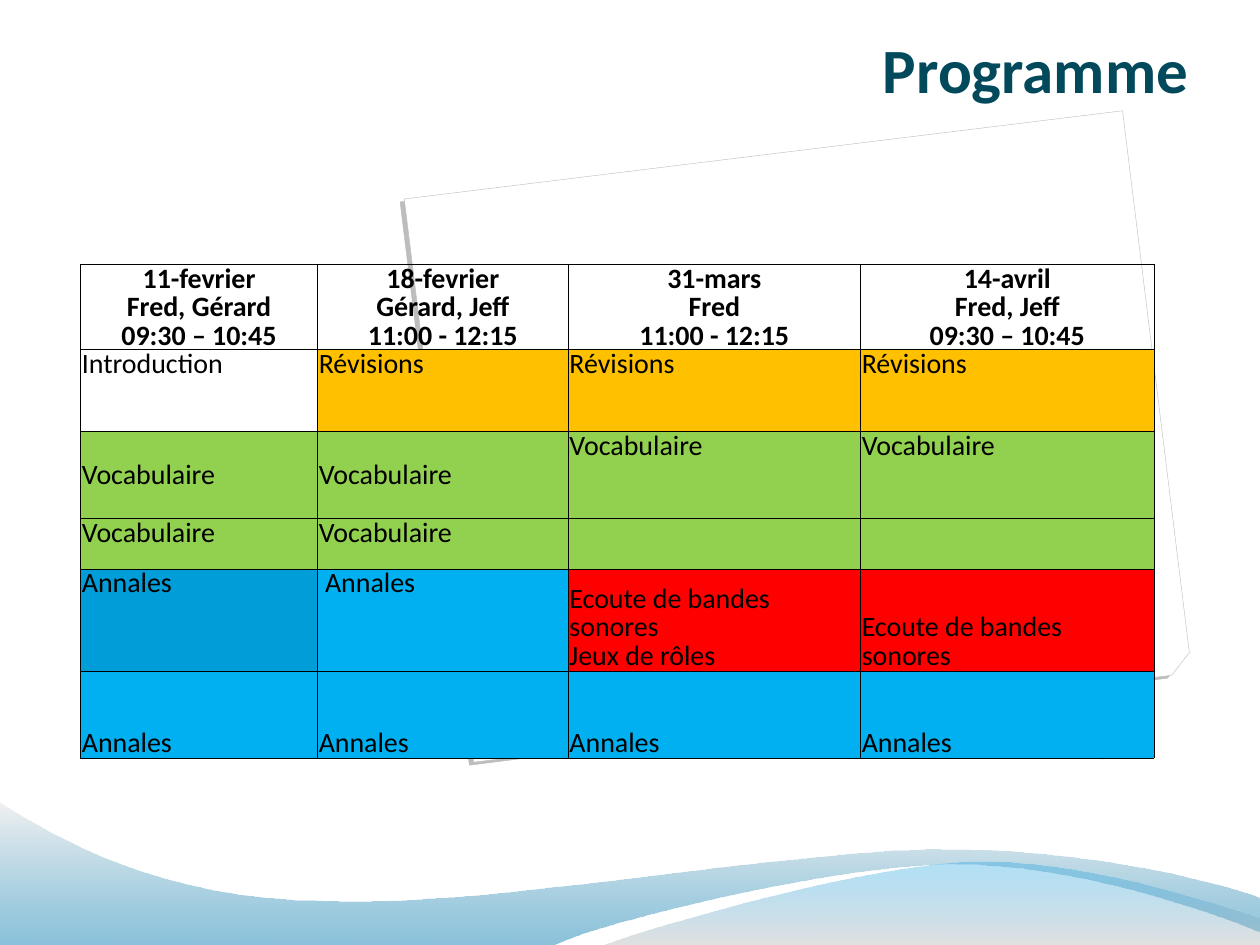
import math

from pptx import Presentation, util as u
from pptx.dml.color import RGBColor
from pptx.enum import text
from pptx.oxml import ns, parse_xml

BLACK = RGBColor(0, 0, 0)
WHITE = RGBColor(255, 255, 255)
SILVER = RGBColor(0xC0, 0xC0, 0xC0)
TEAL = RGBColor(0x03, 0x49, 0x5C)
DEEP_BLUE = RGBColor(0x00, 0x79, 0xAF)
SKY = RGBColor(0x00, 0x9B, 0xE5)
PALE = RGBColor(0xE7, 0xE7, 0xE7)
GREY = RGBColor(0xBC, 0xBC, 0xBC)
AMBER = RGBColor(0xFF, 0xC0, 0x00)
GREEN = RGBColor(0x92, 0xD0, 0x50)
OCEAN = RGBColor(0x00, 0x9D, 0xD9)
BLUE = RGBColor(0x00, 0xB0, 0xF0)
RED = RGBColor(0xFF, 0x00, 0x00)

TOP = text.MSO_ANCHOR.TOP
MIDDLE = text.MSO_ANCHOR.MIDDLE
BOTTOM = text.MSO_ANCHOR.BOTTOM

TILT = 7
SHEET = [(3.76, 6.05), (9.3, 5.36), (9.44, 5.18), (8.91, 0.88), (3.21, 1.58)]
SHEET_CENTER = (6.34, 3.46)
FOLD = [(8.76, 6.04), (8.74, 5.87), (8.91, 5.85)]
FOLD_CENTER = (8.84, 5.94)
LONG_WAVE = [
    (0, 7.5), (4.4, 7.5),
    (4.76, 7.32, 6.64, 6.86, 7.58, 6.86), (8.53, 6.86, 9.58, 7.23, 10, 7.4),
    (10.01, 7.13),
    (9.83, 7.05, 8.7, 6.73, 7.46, 6.74), (6.22, 6.74, 3.82, 7.21, 2.57, 7.15),
    (1.29, 7.14, 0.46, 6.66, -0.01, 6.36),
]
SHORT_WAVE = [
    (4.79, 7.5), (5.09, 7.38, 6.82, 6.87, 7.69, 6.84),
    (8.56, 6.8, 9.61, 7.17, 10, 7.28), (10, 7.5),
]

COLUMNS = [1.88, 1.99, 2.32, 2.33]
ROWS = [0.37, 0.65, 0.69, 0.37, 0.81, 0.69]
HEADERS = [
    "11-fevrier\vFred, Gérard\v09:30 – 10:45",
    "18-fevrier\vGérard, Jeff\v11:00 - 12:15",
    "31-mars\vFred\v11:00 - 12:15",
    "14-avril\vFred, Jeff\v09:30 – 10:45",
]
REVISION = ("Révisions", AMBER, TOP)
VOCABULARY = ("Vocabulaire", GREEN, TOP)
VOCABULARY_MIDDLE = ("Vocabulaire", GREEN, MIDDLE)
VOCABULARY_BLANK = ("", GREEN, TOP)
PROGRAMME = [
    [(header, None, BOTTOM) for header in HEADERS],
    [("Introduction", None, TOP)] + [REVISION] * 3,
    [VOCABULARY_MIDDLE] * 2 + [VOCABULARY] * 2,
    [VOCABULARY] * 2 + [VOCABULARY_BLANK] * 2,
    [
        ("Annales", OCEAN, TOP),
        (" Annales", BLUE, TOP),
        ("Ecoute de bandes sonores\nJeux de rôles", RED, BOTTOM),
        ("Ecoute de bandes sonores", RED, BOTTOM),
    ],
    [("Annales", BLUE, BOTTOM)] * 4,
]


def turn(point, center, degrees):
    angle = math.radians(degrees)
    x, y = point[0] - center[0], point[1] - center[1]
    return (
        center[0] + x * math.cos(angle) - y * math.sin(angle),
        center[1] + x * math.sin(angle) + y * math.cos(angle),
    )


class SlideBuilder:
    font_name = "Calibri"

    def __init__(self, page):
        self.page = page

    def outline(self, outline):
        points = [
            (u.Inches(x), u.Inches(y))
            for segment in outline
            for x, y in zip(segment[::2], segment[1::2])
        ]
        builder = self.page.shapes.build_freeform(*points[0], scale=1.0)
        builder.add_line_segments(points[1:], close=True)
        shape = builder.convert_to_shape()
        shape.shadow.inherit = False
        lines = iter(list(shape._element.iter(ns.qn("a:lnTo"))))
        for segment in outline[1:]:
            line = next(lines)
            if len(segment) == 6:
                curve = parse_xml(f'<a:cubicBezTo {ns.nsdecls("a")}/>')
                line.addprevious(curve)
                for part in (line, next(lines), next(lines)):
                    curve.append(part[0])
                    part.getparent().remove(part)
        return shape

    def paper(self, outline, center, line_color, line_width, alpha, distance, angle):
        shape = self.outline([turn(point, center, TILT) for point in outline])
        shape.rotation = 360 - TILT
        shape.fill.solid()
        shape.fill.fore_color.rgb = WHITE
        shape.line.color.rgb = line_color
        shape.line.width = u.Pt(line_width)
        effects = shape._element.spPr.find(ns.qn("a:effectLst"))
        effects.append(parse_xml(
            f'<a:outerShdw {ns.nsdecls("a")} blurRad="0" dist="{u.Pt(distance)}" '
            f'dir="{angle * 60000}" algn="ctr" rotWithShape="0"><a:srgbClr val="{BLACK}">'
            f'<a:alpha val="{alpha * 1000}"/></a:srgbClr></a:outerShdw>'
        ))

    def wave(self, outline, *stops):
        shape = self.outline(outline)
        shape.line.fill.background()
        shape.fill.gradient()
        shape.fill.gradient_angle = 90
        for stop, (color, alpha) in zip(shape.fill.gradient_stops, stops):
            stop.color.rgb = color
        colors = shape._element.spPr.iter(ns.qn("a:srgbClr"))
        for element, (color, alpha) in zip(list(colors), stops):
            element.append(parse_xml(
                f'<a:alpha {ns.nsdecls("a")} val="{alpha * 1000}"/>'
            ))

    def style(self, paragraph, size, color, bold, align):
        paragraph.alignment = align
        paragraph.font.name = self.font_name
        paragraph.font.size = u.Pt(size)
        paragraph.font.bold = bold
        paragraph.font.color.rgb = color

    def title(self, words, left, top, width, height):
        box = self.page.shapes.add_textbox(*map(u.Inches, (left, top, width, height)))
        frame = box.text_frame
        frame.word_wrap = True
        frame.vertical_anchor = BOTTOM
        frame.margin_left = frame.margin_right = frame.margin_bottom = 0
        frame.text = words
        self.style(frame.paragraphs[0], 36, TEAL, True, text.PP_ALIGN.RIGHT)

    def borders(self, cell):
        properties = cell._tc.get_or_add_tcPr()
        for side in "LRTB":
            properties.append(parse_xml(
                f'<a:ln{side} {ns.nsdecls("a")} w="{u.Pt(0.23)}"><a:solidFill>'
                f'<a:srgbClr val="{BLACK}"/></a:solidFill></a:ln{side}>'
            ))

    def cell(self, cell, words, color, anchor, header):
        self.borders(cell)
        if color is None:
            cell.fill.background()
        else:
            cell.fill.solid()
            cell.fill.fore_color.rgb = color
        if not words:
            return
        cell.margin_left = cell.margin_right = cell.margin_top = u.Inches(0.01)
        cell.margin_bottom = 0
        cell.vertical_anchor = anchor
        cell.text_frame.text = words
        align = text.PP_ALIGN.CENTER if header else text.PP_ALIGN.LEFT
        for paragraph in cell.text_frame.paragraphs:
            paragraph.line_spacing = 0.83
            self.style(paragraph, 16, BLACK, header, align)

    def table(self, rows, left, top):
        size = (left, top, sum(COLUMNS), sum(ROWS))
        table = self.page.shapes.add_table(
            len(ROWS), len(COLUMNS), *map(u.Inches, size)
        ).table
        table.first_row = table.horz_banding = False
        for column, width in zip(table.columns, COLUMNS):
            column.width = u.Inches(width)
        for index, (row, height) in enumerate(zip(table.rows, ROWS)):
            row.height = u.Inches(height)
            for cell, content in zip(row.cells, rows[index]):
                self.cell(cell, *content, header=index == 0)


def main():
    deck = Presentation()
    deck.slide_width, deck.slide_height = u.Inches(10), u.Inches(7.5)
    slide = SlideBuilder(deck.slides.add_slide(deck.slide_layouts[6]))
    slide.paper(SHEET, SHEET_CENTER, SILVER, 0.25, alpha=25, distance=3, angle=145)
    slide.paper(FOLD, FOLD_CENTER, WHITE, 1, alpha=47, distance=0.5, angle=272)
    slide.wave(LONG_WAVE, (DEEP_BLUE, 46), (PALE, 56))
    slide.wave(SHORT_WAVE, (GREY, 46), (SKY, 31))
    slide.title("Programme", 0.43, 0.13, 9, 0.71)
    slide.table(PROGRAMME, 0.64, 2.1)
    deck.save("out.pptx")


if __name__ == "__main__":
    main()
